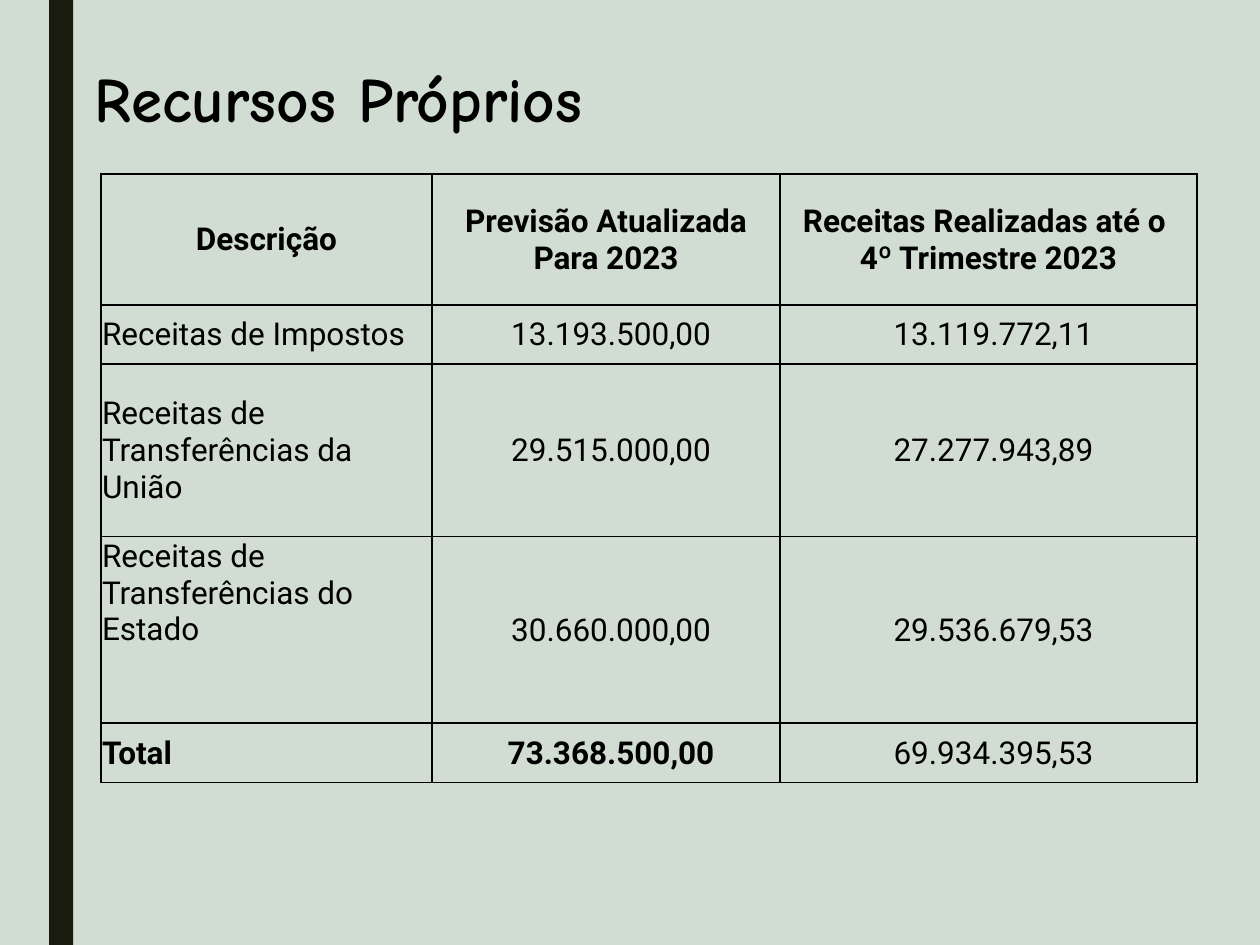
from lxml.etree import SubElement
from pptx import Presentation
from pptx.dml.color import RGBColor
from pptx.enum.shapes import MSO_SHAPE
from pptx.enum.text import MSO_ANCHOR, PP_ALIGN
from pptx.oxml.ns import qn
from pptx.util import Inches, Pt

TITLE = "Recursos Próprios"
HEADER = [
    ["Descrição"],
    ["Previsão Atualizada Para 2023"],
    ["Receitas Realizadas até o ", "4º Trimestre 2023"],
]
REVENUES = [
    ("Receitas de Impostos", "13.193.500,00", "13.119.772,11"),
    ("Receitas de Transferências da União", "29.515.000,00", "27.277.943,89"),
    ("Receitas de Transferências do Estado", "30.660.000,00", "29.536.679,53"),
    ("Total", "73.368.500,00", "69.934.395,53"),
]
ROWS = [HEADER] + [[[text] for text in row] for row in REVENUES]
COL_WIDTHS = [2.63, 2.76, 3.31]
ROW_HEIGHTS = [1.04, 0.47, 1.37, 1.48, 0.47]
STATE_ROW, TOTAL_ROW = 3, 4
COLORS = {"background": "D1DDD2", "bar": "191B0E", "ink": "000000"}


def color(name):
    return RGBColor.from_string(COLORS[name])


def add_run(p, text, font, size, bold):
    r = p.add_run()
    r.text = text
    r.font.name, r.font.size, r.font.bold = font, Pt(size), bold
    r.font.color.rgb = color("ink")


def add_borders(cell):
    tc_pr = cell._tc.get_or_add_tcPr()
    for side in ("lnL", "lnR", "lnT", "lnB"):
        ln = SubElement(tc_pr, qn(f"a:{side}"), w=str(Pt(1)))
        fill = SubElement(ln, qn("a:solidFill"))
        SubElement(fill, qn("a:srgbClr"), val=COLORS["ink"])


def fill_cell(cell, lines, row, col):
    is_number = row > 0 and col > 0
    bold = row == 0 or (row == TOTAL_ROW and col < 2)
    add_borders(cell)
    cell.fill.background()
    cell.margin_left = Inches(0.09 if is_number else 0.01)
    cell.margin_top = cell.margin_right = Inches(0.01)
    cell.margin_bottom = 0
    at_top = row == STATE_ROW and col == 0
    cell.vertical_anchor = MSO_ANCHOR.TOP if at_top else MSO_ANCHOR.MIDDLE
    tf = cell.text_frame
    for i, line in enumerate(lines):
        p = tf.add_paragraph() if i else tf.paragraphs[0]
        p.alignment = PP_ALIGN.CENTER if row == 0 or col > 0 else PP_ALIGN.LEFT
        add_run(p, line, "Roboto", 18, bold)


prs = Presentation()
prs.slide_width, prs.slide_height = Inches(10), Inches(7.5)
s = prs.slides.add_slide(prs.slide_layouts[5])
s.background.fill.solid()
s.background.fill.fore_color.rgb = color("background")

bar = s.shapes.add_shape(MSO_SHAPE.RECTANGLE, Inches(0.39), 0, Inches(0.19), prs.slide_height)
bar.shadow.inherit = False
bar.fill.solid()
bar.fill.fore_color.rgb = color("bar")
bar.line.fill.background()

title = s.shapes.title
title.left, title.top, title.width, title.height = Inches(0.65), 0, Inches(7.88), Inches(1.62)
tf = title.text_frame
tf.vertical_anchor = MSO_ANCHOR.MIDDLE
p = tf.paragraphs[0]
p.alignment = PP_ALIGN.LEFT
p.line_spacing = 0.89
add_run(p, TITLE, "Comic Neue", 36, True)

table = s.shapes.add_table(
    len(ROWS), len(COL_WIDTHS), Inches(0.8), Inches(1.38),
    Inches(sum(COL_WIDTHS)), Inches(sum(ROW_HEIGHTS)),
).table
table.first_row = table.horz_banding = False
for column, width in zip(table.columns, COL_WIDTHS):
    column.width = Inches(width)
for table_row, height in zip(table.rows, ROW_HEIGHTS):
    table_row.height = Inches(height)
for row, cells in enumerate(ROWS):
    for col, lines in enumerate(cells):
        fill_cell(table.cell(row, col), lines, row, col)

prs.save("out.pptx")
